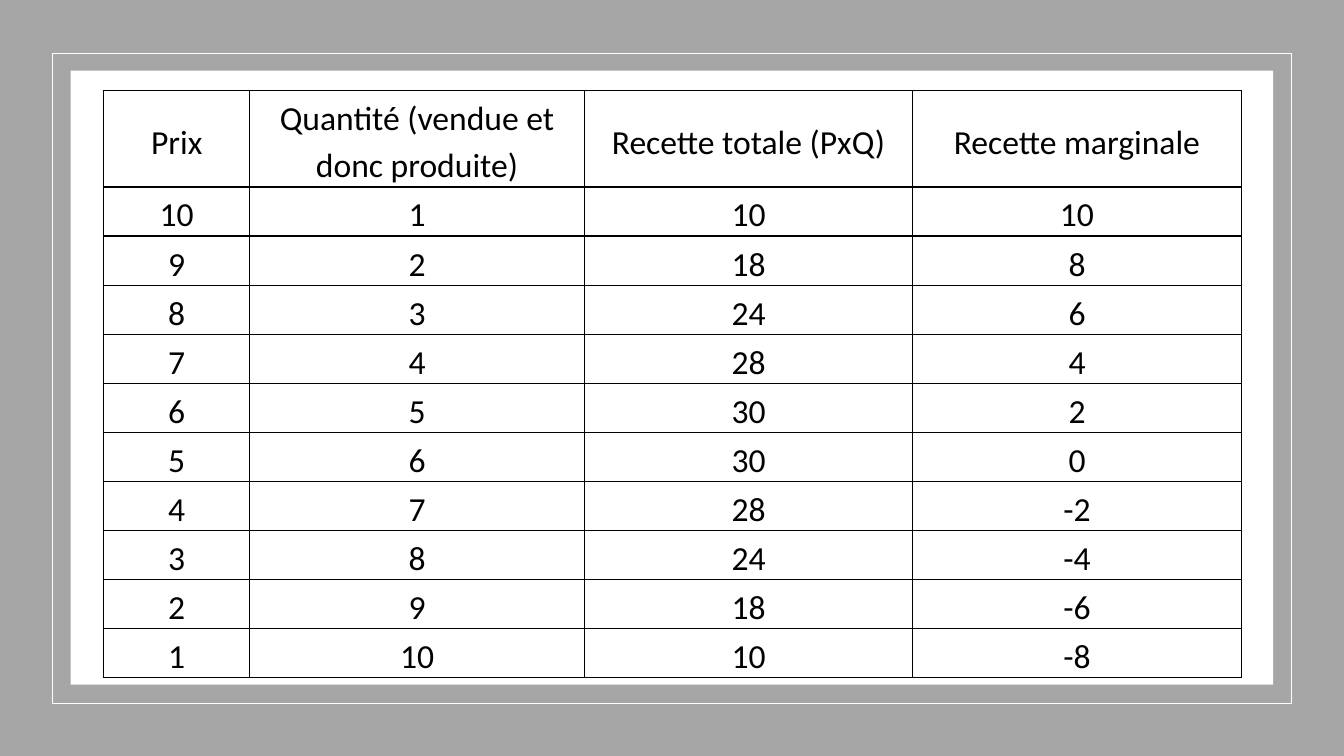
import pptx
import pptx.util
import pptx.dml.color
import pptx.enum.shapes
import pptx.enum.text
import pptx.oxml

HEADINGS = ("Prix", "Quantité (vendue et donc produite)", "Recette totale (PxQ)", "Recette marginale")
REVENUES = [
    (10, 1, 10, 10),
    (9, 2, 18, 8),
    (8, 3, 24, 6),
    (7, 4, 28, 4),
    (6, 5, 30, 2),
    (5, 6, 30, 0),
    (4, 7, 28, -2),
    (3, 8, 24, -4),
    (2, 9, 18, -6),
    (1, 10, 10, -8),
]

THEME = {
    "font": "Calibri",
    "size": 24,
    "text": "000000",
    "rule": "000000",
    "backdrop": "A6A6A6",
    "panel": "FFFFFF",
    "frame": "FFFFFF",
}
PAGE_SIZE = (960, 540)
BANDS = [
    ((0, 0, *PAGE_SIZE), THEME["backdrop"], None),
    ((37.4, 38, 885, 464.4), None, THEME["frame"]),
    ((50.4, 50.4, 859, 438.6), THEME["panel"], None),
]
TABLE_ORIGIN = (74, 64.8)
COLUMN_WIDTHS = (104.4, 239, 234.6, 234.6)
HEADING_HEIGHT, ROW_HEIGHT = 55.4, 31
CELL_MARGINS = {"margin_left": 8.6, "margin_top": 1.4, "margin_right": 8.6, "margin_bottom": 0}
BORDER = (
    '<a:{side} xmlns:a="http://schemas.openxmlformats.org/drawingml/2006/main" w="12700">'
    '<a:solidFill><a:srgbClr val="{color}"/></a:solidFill></a:{side}>'
)


def points(values):
    return [pptx.util.Pt(value) for value in values]


def rgb(color):
    return pptx.dml.color.RGBColor.from_string(color)


def add_band(page, bounds, fill, line):
    band = page.shapes.add_shape(pptx.enum.shapes.MSO_SHAPE.RECTANGLE, *points(bounds))
    band.shadow.inherit = False
    if fill:
        band.fill.solid()
        band.fill.fore_color.rgb = rgb(fill)
    else:
        band.fill.background()
    if line:
        band.line.color.rgb = rgb(line)
        band.line.width = pptx.util.Pt(1)
    else:
        band.line.fill.background()


def write_text(frame, text, size=THEME["size"], color=THEME["text"], spacing=1.15):
    para = frame.paragraphs[0]
    para.alignment = pptx.enum.text.PP_ALIGN.CENTER
    para.line_spacing = spacing
    span = para.add_run()
    span.text = text
    span.font.name = THEME["font"]
    span.font.size = pptx.util.Pt(size)
    span.font.color.rgb = rgb(color)


def format_cell(cell):
    for side, margin in CELL_MARGINS.items():
        setattr(cell, side, pptx.util.Pt(margin))
    cell.vertical_anchor = pptx.enum.text.MSO_ANCHOR.MIDDLE
    properties = cell._tc.get_or_add_tcPr()
    for side in ("lnL", "lnR", "lnT", "lnB"):
        properties.append(pptx.oxml.parse_xml(BORDER.format(side=side, color=THEME["rule"])))
    cell.fill.background()


def add_revenue_table(page):
    rows = [HEADINGS, *REVENUES]
    heights = [HEADING_HEIGHT] + [ROW_HEIGHT] * len(REVENUES)
    bounds = (*TABLE_ORIGIN, sum(COLUMN_WIDTHS), sum(heights))
    table = page.shapes.add_table(len(rows), len(HEADINGS), *points(bounds)).table
    table.first_row = False
    table.horz_banding = False
    for column, width in zip(table.columns, points(COLUMN_WIDTHS)):
        column.width = width
    for row, height, values in zip(table.rows, points(heights), rows):
        row.height = height
        for cell, value in zip(row.cells, values):
            format_cell(cell)
            write_text(cell.text_frame, str(value))


def main():
    deck = pptx.Presentation()
    deck.slide_width, deck.slide_height = points(PAGE_SIZE)
    page = deck.slides.add_slide(deck.slide_layouts[6])
    for band in BANDS:
        add_band(page, *band)
    add_revenue_table(page)
    deck.save("out.pptx")


if __name__ == "__main__":
    main()
